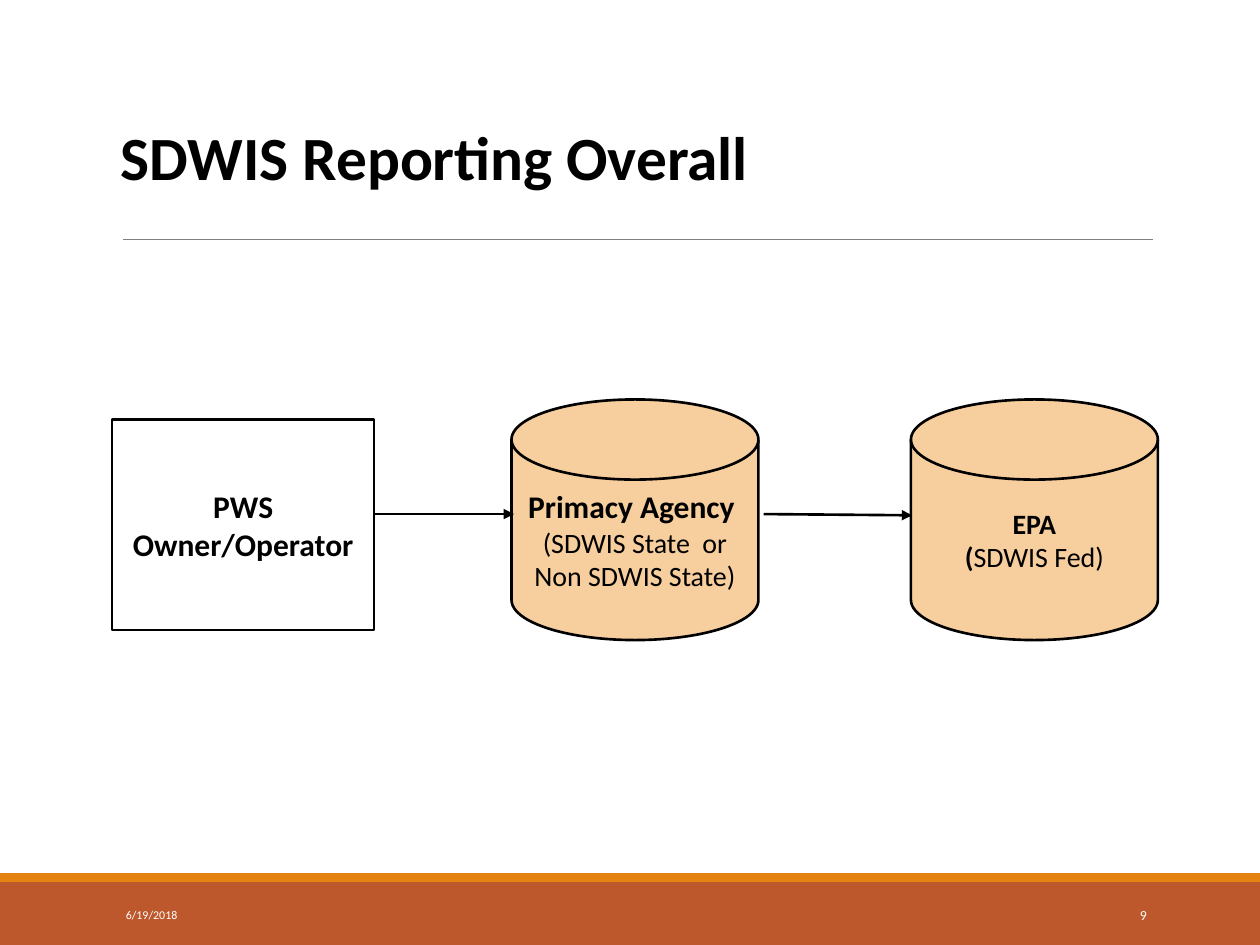
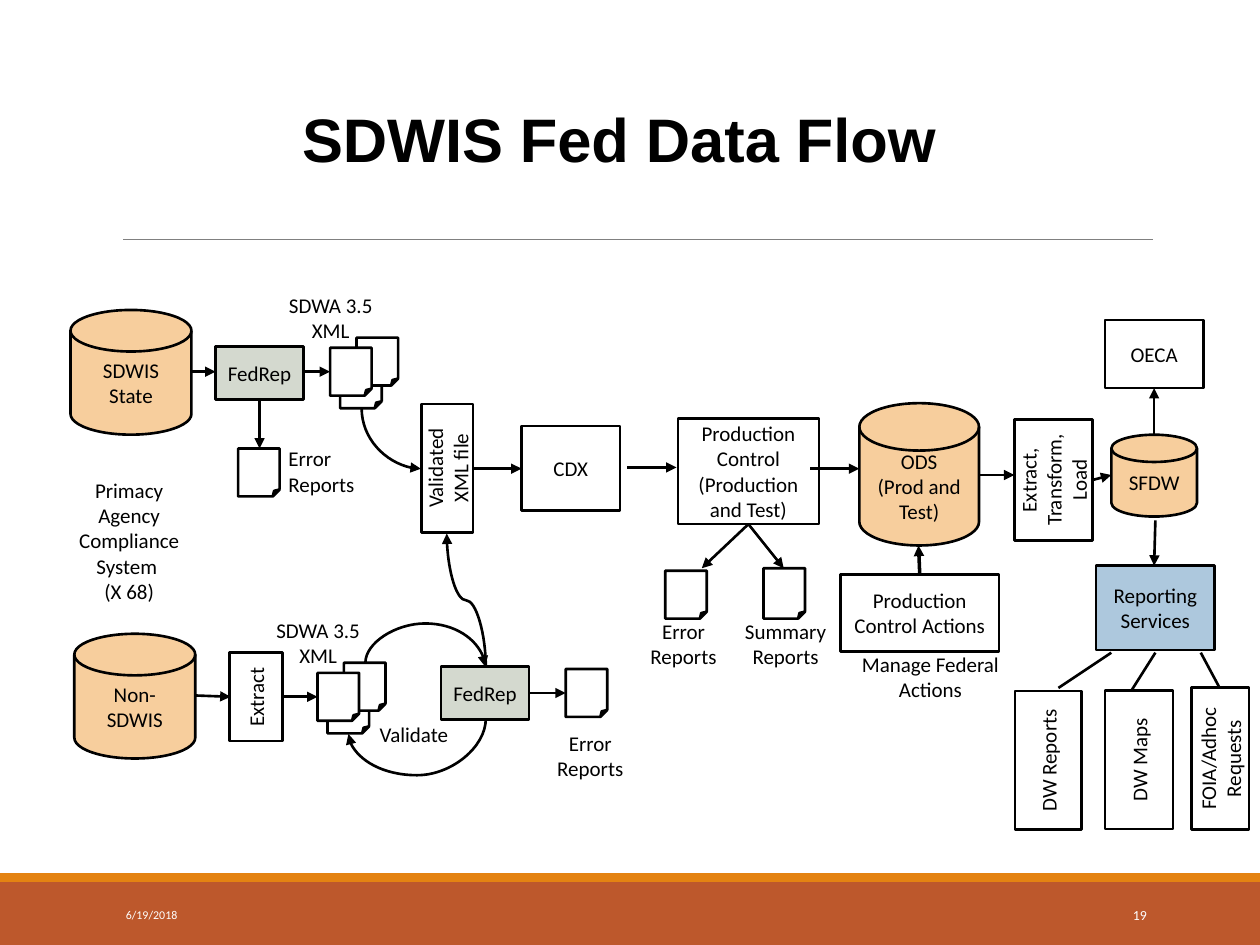
"""Build two slides on SDWIS reporting and the SDWIS Fed data flow."""
from lxml.etree import SubElement
from pptx import Presentation
from pptx.dml.color import RGBColor
from pptx.enum.shapes import MSO_CONNECTOR, MSO_SHAPE
from pptx.enum.text import MSO_ANCHOR, MSO_AUTO_SIZE, PP_ALIGN
from pptx.oxml.ns import qn
from pptx.util import Cm, Pt

BLACK, WHITE, GREY = "000000", "FFFFFF", "808080"
RUST, ORANGE = "BD582C", "E48312"
PEACH, SAGE, BLUE = "F7CE9D", "D4D9CF", "ADC8DD"
LEFT, CENTER, RIGHT = PP_ALIGN.LEFT, PP_ALIGN.CENTER, PP_ALIGN.RIGHT
BOLD = {"bold": True}


def rgb(color):
    """Turn a hex string into a colour."""
    return RGBColor.from_string(color)


def cm(*inches):
    """Turn inches into Cm lengths."""
    return [Cm(v * 2.54) for v in inches]


def assign(obj, values):
    """Set attributes from a dict."""
    for name, value in values.items():
        setattr(obj, name, value)


class Deck:
    """Hold the style and the current slide, and draw each kind of element."""

    font = {"name": "Calibri", "size": Pt(12), "bold": False}
    frame = {"word_wrap": True, "auto_size": MSO_AUTO_SIZE.NONE}
    line_width = 1.5

    def __init__(self):
        """Start a 10 by 7.5 inch presentation."""
        self.prs = Presentation()
        self.prs.slide_width, self.prs.slide_height = cm(10, 7.5)

    def slide(self, title, at, number, align=LEFT, font="Calibri"):
        """Add a slide with its title, bands, rule and footer."""
        self.s = self.prs.slides.add_slide(self.prs.slide_layouts[5])
        self.box((0, 7, 10, 0.5), fill=RUST, line=None)
        self.box((0, 6.93, 10, 0.07), fill=ORANGE, line=None)
        self.line((0.98, 1.9), (9.15, 1.9), GREY, 0.5, head=False)
        sp = self.s.shapes.title
        sp.left, sp.top, sp.width, sp.height = cm(*at)
        self.fill_text(sp, title, align, name=font, size=Pt(35.1), bold=True)
        sp.text_frame.paragraphs[0].line_spacing = 0.9
        self.text((0.9, 7.06, 2.03, 0.4), "6/19/2018", LEFT, MSO_ANCHOR.MIDDLE, size=Pt(6.8), color=WHITE)
        self.text((8.12, 7.06, 1.08, 0.4), number, RIGHT, MSO_ANCHOR.MIDDLE, size=Pt(7.9), color=WHITE)

    def fill_text(self, sp, content, align=CENTER, anchor=MSO_ANCHOR.MIDDLE, inset=0.1, color=BLACK, **font):
        """Fill a shape with lines of text or with paragraphs of formatted runs."""
        tf = sp.text_frame
        side, edge = cm(inset, 0.05)
        assign(tf, {**self.frame, "vertical_anchor": anchor, "margin_left": side, "margin_right": side,
                    "margin_top": edge, "margin_bottom": edge})
        if isinstance(content, str):
            content = [[(row, {})] for row in content.split("\n")]
        for i, runs in enumerate(content):
            p = tf.add_paragraph() if i else tf.paragraphs[0]
            p.alignment = align
            for words, extra in runs:
                r = p.add_run()
                r.text = words
                assign(r.font, {**self.font, **font, **extra})
                r.font.color.rgb = rgb(color)

    def text(self, at, content, align=CENTER, anchor=MSO_ANCHOR.TOP, **font):
        """Add a text box."""
        self.fill_text(self.s.shapes.add_textbox(*cm(*at)), content, align, anchor, **font)

    def box(self, at, content="", fill=WHITE, line=BLACK, kind=MSO_SHAPE.RECTANGLE, turn=0, inset=0.04, **font):
        """Add a filled preset shape with centred text."""
        sp = self.s.shapes.add_shape(kind, *cm(*at))
        sp.shadow.inherit = False
        sp.rotation = turn
        sp.fill.solid()
        sp.fill.fore_color.rgb = rgb(fill)
        if line:
            sp.line.color.rgb = rgb(line)
            sp.line.width = Pt(self.line_width)
        else:
            sp.line.fill.background()
        if content:
            self.fill_text(sp, content, inset=inset, **font)

    def disk(self, at, content, **font):
        """Add a data store."""
        self.box(at, content, PEACH, kind=MSO_SHAPE.FLOWCHART_MAGNETIC_DISK, inset=0.1, **font)

    def page(self, x, y, height=0.38):
        """Add a sheet with a folded corner."""
        self.box((x, y, 0.33, height), kind=MSO_SHAPE.FOLDED_CORNER)

    def xml_pages(self, x, y):
        """Add three overlapping sheets and their label."""
        for dx, dy in ((0.08, 0.1), (0.21, -0.08), (0, 0)):
            self.page(x + dx, y + dy)
        self.text((x - 0.43, y - 0.49, 0.87, 0.5), "SDWA 3.5\nXML", inset=0)

    def style_line(self, c, color, width, head):
        """Format a connector and put an arrowhead at its start."""
        c.line.color.rgb = rgb(color)
        c.line.width = Pt(width)
        spPr = c.element.find(qn("p:spPr"))
        if head:
            SubElement(spPr.find(qn("a:ln")), qn("a:headEnd")).set("type", "triangle")
        SubElement(spPr, qn("a:effectLst"))
        return spPr

    def line(self, tip, tail, color=BLACK, width=1.5, head=True):
        """Add a straight line with its arrowhead at the tip."""
        c = self.s.shapes.add_connector(MSO_CONNECTOR.STRAIGHT, *cm(*tip, *tail))
        self.style_line(c, color, width, head)

    def curve(self, at, turn, flips="", preset="curvedConnector3", bend=None):
        """Add a turned and flipped curved arrow."""
        x, y, w, h = at
        c = self.s.shapes.add_connector(MSO_CONNECTOR.CURVE, *cm(x, y, x + w, y + h))
        spPr = self.style_line(c, BLACK, self.line_width, True)
        xfrm, geom = spPr.find(qn("a:xfrm")), spPr.find(qn("a:prstGeom"))
        xfrm.set("rot", str(turn * 60000))
        for flip in flips:
            xfrm.set("flip" + flip.upper(), "1")
        geom.set("prst", preset)
        if bend is not None:
            av = geom.find(qn("a:avLst"))
            if av is None:
                av = SubElement(geom, qn("a:avLst"))
            gd = SubElement(av, qn("a:gd"))
            gd.set("name", "adj1")
            gd.set("fmla", f"val {round(bend * 100000)}")


def reporting_overall(d):
    """Draw the path from operator to agency to EPA."""
    d.slide("SDWIS Reporting Overall", (0.86, 0.72, 8.62, 1.11), "9")
    d.box((0.89, 3.33, 2.08, 1.67), "PWS Owner/Operator", size=Pt(18), bold=True)
    d.disk((4.06, 3.17, 1.96, 1.91), [[("Primacy Agency ", {"size": Pt(18), **BOLD})],
                                      [("(SDWIS State  or Non SDWIS State)", {})]], size=Pt(16))
    d.disk((7.23, 3.17, 1.96, 1.91), [[("EPA", BOLD)], [("(", BOLD), ("SDWIS Fed)", {})]], size=Pt(16))
    d.line((4.08, 4.08), (2.98, 4.08))
    d.line((7.24, 4.09), (6.06, 4.08))


def data_flow(d):
    """Draw the flow from agency systems to the reporting services."""
    d.slide("SDWIS Fed Data Flow ", (0.67, 0.58, 8.62, 1.11), "19", CENTER, "Arial")
    for at, words in (
        ((6.82, 3.2, 0.95, 1.13), "ODS\n(Prod and Test)"),
        ((8.82, 3.45, 0.68, 0.65), "SFDW"),
        ((0.56, 2.46, 0.96, 0.99), "SDWIS State"),
        ((0.59, 5.03, 0.96, 0.99), "Non-SDWIS"),
    ):
        d.disk(at, words)
    for at, words, fill in (
        ((4.14, 3.38, 0.78, 0.67), "CDX", WHITE),
        ((5.38, 3.32, 1.12, 0.84), "Production Control\n(Production and Test)", WHITE),
        ((6.67, 4.56, 1.26, 0.61), "Production Control Actions", WHITE),
        ((8.77, 2.54, 0.78, 0.54), "OECA", WHITE),
        ((3.5, 5.29, 0.7, 0.42), "FedRep", SAGE),
        ((1.71, 2.75, 0.7, 0.42), "FedRep", SAGE),
        ((8.7, 4.49, 0.94, 0.67), "Reporting Services", BLUE),
    ):
        d.box(at, words, fill)
    for at, words in (
        ((1.68, 5.32, 0.7, 0.42), "Extract"),
        ((3.04, 3.51, 1.02, 0.41), "Validated XML file"),
        ((7.88, 3.5, 0.96, 0.62), "Extract, Transform, Load"),
        ((7.77, 5.77, 1.1, 0.53), "DW Reports"),
        ((8.49, 5.76, 1.1, 0.54), "DW Maps"),
        ((9.12, 5.79, 1.13, 0.46), "FOIA/Adhoc Requests"),
    ):
        d.box(at, words, turn=270)
    d.xml_pages(2.52, 5.34)
    d.xml_pages(2.62, 2.76)
    for x, y in ((4.49, 5.31), (1.89, 3.56), (5.28, 4.53)):
        d.page(x, y)
    d.page(6.06, 4.51, 0.4)
    for at, words, align in (
        ((6.55, 5.12, 1.67, 0.5), "Manage Federal Actions", CENTER),
        ((4.16, 5.75, 1.05, 0.5), "Error Reports", CENTER),
        ((4.9, 4.86, 1.05, 0.5), "Error Reports", CENTER),
        ((2.19, 3.49, 1.05, 0.5), "Error Reports", LEFT),
        ((5.71, 4.86, 1.05, 0.5), "Summary Reports", CENTER),
        ((0.5, 3.74, 1.05, 1.11), "Primacy Agency Compliance System \n(X 68)", CENTER),
    ):
        d.text(at, words, align)
    d.text((2.91, 5.68, 0.75, 0.3), "Validate", inset=0)
    d.curve((3.36, 4.8, 0.03, 0.95), 270, "v", bend=11.4)
    d.curve((3.25, 5.22, 0.12, 1.09), 90, "hv", bend=-2.73)
    d.curve((2.87, 3.24, 0.47, 0.48), 180, preset="curvedConnector2")
    d.curve((3.17, 4.61, 1.06, 0.31), 270, "h", bend=0.5)
    for tip, tail in (
        ((1.83, 5.53), (1.55, 5.52)), ((2.52, 5.53), (2.24, 5.53)), ((4.49, 5.5), (4.21, 5.5)),
        ((1.71, 2.95), (1.52, 2.95)), ((2.62, 2.95), (2.41, 2.95)), ((2.06, 3.56), (2.06, 3.16)),
        ((4.14, 3.72), (3.75, 3.72)), ((5.37, 3.71), (4.98, 3.71)), ((6.82, 3.72), (6.43, 3.72)),
        ((8.05, 3.77), (7.76, 3.77)), ((8.82, 3.77), (8.67, 3.81)), ((6.22, 4.51), (5.94, 4.16)),
        ((5.57, 4.51), (5.94, 4.16)), ((9.16, 4.49), (9.17, 4.13)), ((9.16, 3.08), (9.16, 3.45)),
    ):
        d.line(tip, tail)
    d.line((7.29, 4.33), (7.3, 4.56), width=2)
    for start, end in (((9.17, 5.18), (8.98, 5.48)), ((9.53, 5.18), (9.68, 5.46)), ((8.82, 5.18), (8.4, 5.46))):
        d.line(start, end, head=False)


def main():
    """Build and save both slides."""
    d = Deck()
    reporting_overall(d)
    data_flow(d)
    d.prs.save("out.pptx")


if __name__ == "__main__":
    main()
